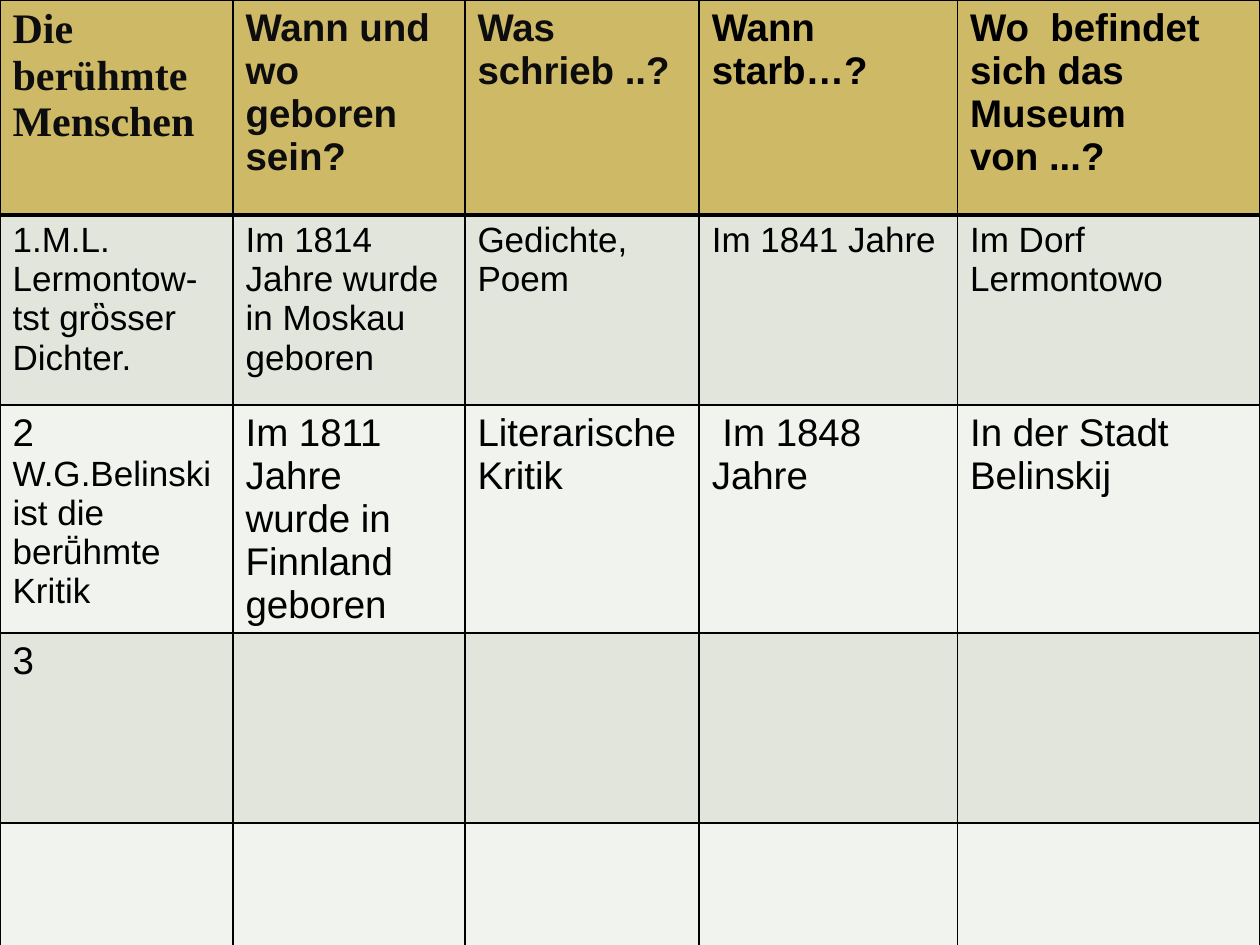
"""Build a slide with a table of famous writers and questions about them."""
from lxml.etree import SubElement
from pptx import Presentation
from pptx.dml.color import RGBColor
from pptx.oxml.ns import qn
from pptx.util import Pt


def paint(fill, color):
    fill.solid()
    fill.fore_color.rgb = RGBColor.from_string(color)


def write(frame, text, size=22, font="Arial", color="000000", bold=False):
    for i, line in enumerate(text.split("\n")):
        para = frame.add_paragraph() if i else frame.paragraphs[-1]
        run = para.add_run()
        run.text = line
        run.font.size = Pt(size)
        run.font.name = font
        run.font.bold = bold
        paint(run.font.fill, color)


deck = Presentation()
deck.slide_width, deck.slide_height = Pt(720), Pt(540)
slide = deck.slides.add_slide(deck.slide_layouts[6])
paint(slide.background.fill, "000000")

heads = ["Die berühmte Menschen", "Wann und wo geboren sein?", "Was\nschrieb ..?",
         "Wann starb…?", "Wo  befindet sich das Museum von ...?"]
poet = ["1.M.L. Lermontow-tst grὃsser Dichter.", "Im 1814 Jahre wurde in Moskau geboren",
        "Gedichte, Poem", "Im 1841 Jahre", "Im Dorf Lermontowo"]
critic = ["2 ", "Im 1811 Jahre wurde in Finnland geboren", "Literarische Kritik",
          " Im 1848 Jahre", "In der Stadt Belinskij"]
rows = [heads, poet, critic, ["3"] + [""] * 4, [""] * 5]
fills = ["CEB966", "E1E5DC", "F0F3EE", "E1E5DC", "F0F3EE"]
widths = [133.2, 132.5, 133.9, 147.6, 172.8]
heights = [122.8] + [108.7] * 4

table = slide.shapes.add_table(5, 5, 0, 0, Pt(720), Pt(sum(heights))).table
for col, width in zip(table.columns, widths):
    col.width = Pt(width)

for r, texts in enumerate(rows):
    table.rows[r].height = Pt(heights[r])
    for c, text in enumerate(texts):
        cell = table.cell(r, c)
        props = cell._tc.get_or_add_tcPr()
        for side in "LRTB":
            thick = (r, side) in [(0, "B"), (1, "T")]
            line = SubElement(props, qn(f"a:ln{side}"), w=str(Pt(3 if thick else 1)))
            solid = SubElement(line, qn("a:solidFill"))
            SubElement(solid, qn("a:srgbClr"), val="000000")
        paint(cell.fill, fills[r])
        if text:
            style = {"size": 20 if r == 1 else 22, "bold": r == 0}
            if r == 0 and c < 3:
                style["color"] = "0D0D0D"
            if r == c == 0:
                style.update(size=24, font="Times New Roman")
            write(cell.text_frame, text, **style)

write(table.cell(2, 0).text_frame, "W.G.Belinski ist die  berṻhmte Kritik", size=20)

deck.save("out.pptx")
